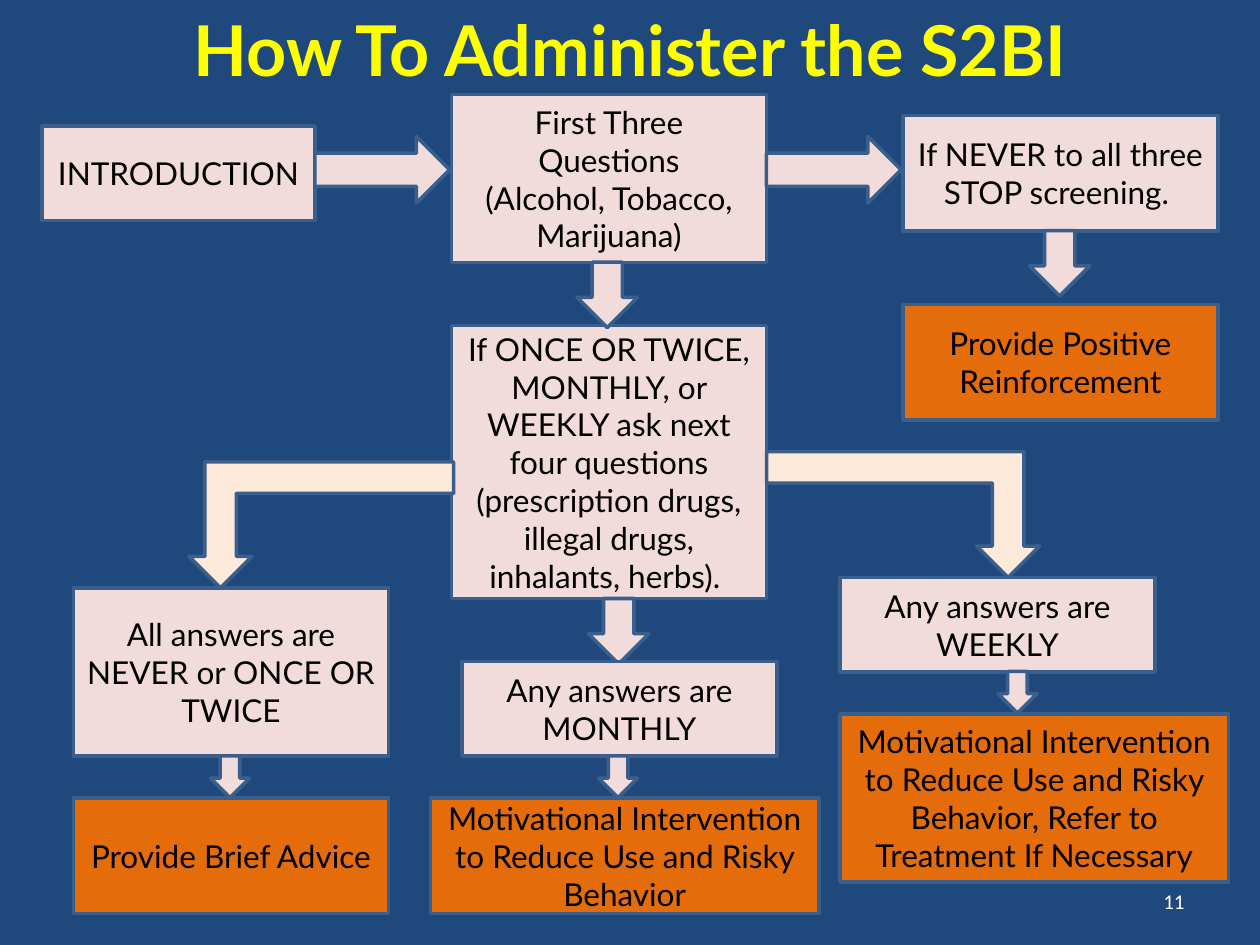
from pptx import Presentation
from pptx.dml.color import RGBColor
from pptx.enum.shapes import MSO_SHAPE
from pptx.enum.text import MSO_ANCHOR, PP_ALIGN
from pptx.oxml.ns import qn
from pptx.util import Pt

NAVY = RGBColor(0x1F, 0x49, 0x7D)
EDGE = RGBColor(0x3A, 0x5F, 0x8C)
PINK = RGBColor(0xF2, 0xDC, 0xDB)
CREAM = RGBColor(0xFD, 0xEA, 0xDA)
ORANGE = RGBColor(0xE4, 0x6C, 0x0A)
YELLOW = RGBColor(0xFF, 0xFF, 0x00)
BLACK = RGBColor(0, 0, 0)
WHITE = RGBColor(0xFF, 0xFF, 0xFF)
RECT = MSO_SHAPE.RECTANGLE
ARROW = MSO_SHAPE.RIGHT_ARROW
BENT = MSO_SHAPE.BENT_UP_ARROW
MIDDLE, TOP = MSO_ANCHOR.MIDDLE, MSO_ANCHOR.TOP
CENTER, RIGHT = PP_ALIGN.CENTER, PP_ALIGN.RIGHT


class Chart:
    """Draws the parts of a flow chart on one slide in one style."""

    font = "Lato"
    size = 18
    edge = 2
    wide = 180

    def __init__(self, slide):
        self.slide = slide
        fill = slide.background.fill
        fill.solid()
        fill.fore_color.rgb = NAVY

    def text(self, frame, lines, size, color, font, align, anchor, bold=False):
        frame.word_wrap = True
        frame.vertical_anchor = anchor
        for i, line in enumerate(lines):
            para = frame.paragraphs[0] if i == 0 else frame.add_paragraph()
            para.alignment = align
            run = para.add_run()
            run.text = line
            run.font.name = font
            run.font.size = Pt(size)
            run.font.bold = bold
            run.font.color.rgb = color

    def label(self, area, words, size, color, font, align, anchor, bold=False):
        box = self.slide.shapes.add_textbox(*map(Pt, area))
        self.text(box.text_frame, [words], size, color, font, align, anchor, bold)

    def shape(self, kind, area, color):
        item = self.slide.shapes.add_shape(kind, *map(Pt, area))
        item.shadow.inherit = False
        item.fill.solid()
        item.fill.fore_color.rgb = color
        item.line.color.rgb = EDGE
        item.line.width = Pt(self.edge)
        return item

    def box(self, x, y, high, *lines, wide=wide, color=PINK):
        item = self.shape(RECT, (x, y, wide, high), color)
        self.text(item.text_frame, lines, self.size, BLACK, self.font, CENTER, MIDDLE)

    def across(self, x, y):
        self.shape(ARROW, (x, y, 77, 38), PINK)

    def down(self, x, y, long=37.4, thick=34.6):
        area = (x - long / 2, y - thick / 2, long, thick)
        self.shape(ARROW, area, PINK).rotation = 90

    def bend(self, x, y, wide, flip=False):
        item = self.shape(BENT, (x, y, wide, 72), CREAM)
        item.rotation = 180
        if flip:
            item.element.spPr.find(qn("a:xfrm")).set("flipH", "1")


def main():
    deck = Presentation()
    deck.slide_width, deck.slide_height = Pt(720), Pt(540)
    chart = Chart(deck.slides.add_slide(deck.slide_layouts[6]))
    left, mid, right = 42, 258, 516
    small = (23.8, 22.3)

    chart.label((0, 0, 720, 55.4), "How To Administer the S2BI", 40, YELLOW,
                "Lato", CENTER, TOP, True)

    chart.box(24, 72, 54, "INTRODUCTION", wide=156)
    chart.across(180, 78)
    chart.box(mid, 54, 96, "First Three Questions", "(Alcohol, Tobacco, Marijuana)")
    chart.across(438, 78)
    chart.box(right, 66, 66, "If NEVER to all three STOP screening. ")
    chart.down(605.5, 150.5)
    chart.box(right, 174, 66, "Provide Positive Reinforcement", color=ORANGE)

    chart.box(mid, 186, 156,
              "If ONCE OR TWICE, MONTHLY, or WEEKLY ask next four questions "
              "(prescription drugs, illegal drugs, inhalants, herbs). ")
    chart.down(347, 168.5)

    chart.box(left, 336, 96, "All answers are NEVER or ONCE OR TWICE")
    chart.bend(108, 264, 151.2)
    chart.down(131.4, 443.9, *small)
    chart.box(left, 456, 66, "Provide Brief Advice", color=ORANGE)

    reduce = "Motivational Intervention to Reduce Use and Risky Behavior"
    chart.down(353.5, 360.7)
    chart.box(264, 378, 54, "Any answers are MONTHLY")
    chart.box(246, 456, 66, reduce, wide=222, color=ORANGE)
    chart.down(353.2, 443.9, *small)

    chart.bend(438, 258, 156, flip=True)
    chart.box(480, 330, 54, "Any answers are WEEKLY")
    chart.down(581.4, 395.6, *small)
    chart.box(480, 408, 96, reduce + ", Refer to Treatment If Necessary",
              wide=222, color=ORANGE)

    chart.label((right, 500.4, 168, 28.8), "11", 12, WHITE, "Calibri", RIGHT, MIDDLE)
    deck.save("out.pptx")


if __name__ == "__main__":
    main()
